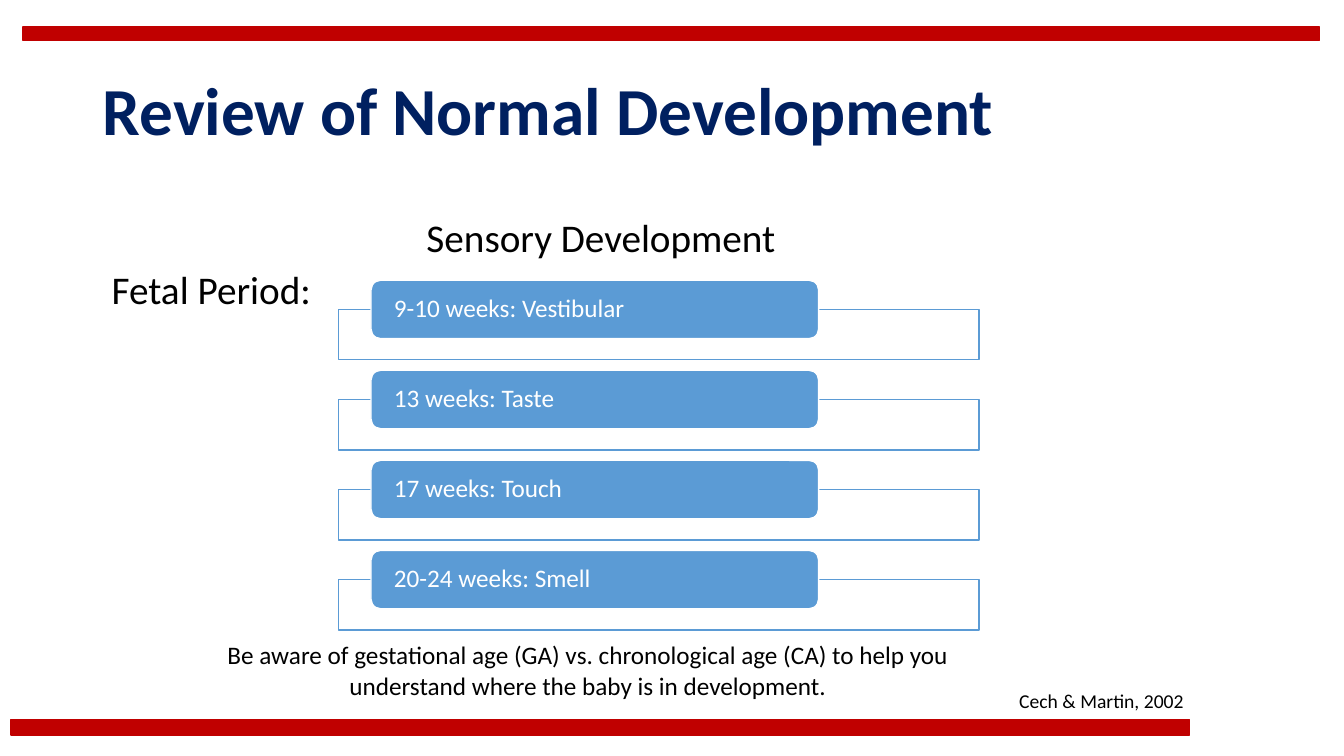
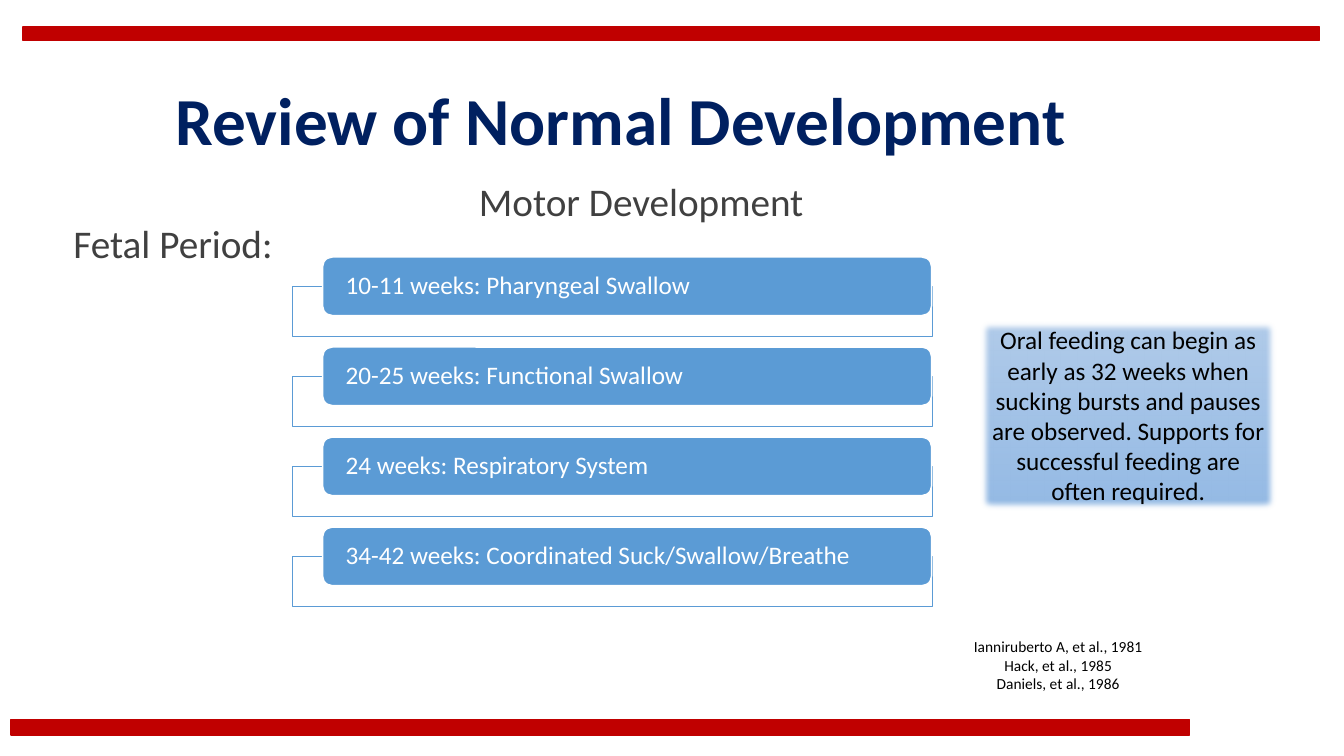
from dataclasses import dataclass

from lxml import etree
from pptx import Presentation
from pptx.dml.color import RGBColor
from pptx.enum.shapes import MSO_SHAPE
from pptx.enum.text import MSO_ANCHOR, MSO_AUTO_SIZE, PP_ALIGN
from pptx.oxml.ns import qn
from pptx.util import Inches, Pt

FONT = "Calibri"
COLOURS = {
    "band": "C00000",
    "title": "002060",
    "black": "000000",
    "grey": "404040",
    "white": "FFFFFF",
    "step": "5B9BD5",
    "callout_top": "B1CBE9",
    "callout_bottom": "93B9E4",
}
STEP_PITCH = 2.68 / 3


@dataclass
class Box:
    left: float
    top: float
    width: float
    height: float

    def lengths(self) -> tuple:
        return tuple(Inches(n) for n in (self.left, self.top, self.width, self.height))


@dataclass
class Label:
    text: str
    box: Box
    size: int
    colour: str = "black"
    align: PP_ALIGN = PP_ALIGN.LEFT
    wrap: bool = True


@dataclass
class Steps:
    texts: list[str]
    frame: Box  # outline of the first step
    pill_left: float
    pill_width: float


@dataclass
class Page:
    title_box: Box
    labels: list[Label]
    steps: Steps
    callout: Label | None = None


BANDS = [Box(0.11, 7.14, 11.69, 0.15), Box(0.23, 0.27, 12.86, 0.13)]
CENTER = PP_ALIGN.CENTER

PAGES = [
    Page(
        Box(0.92, 0.4, 11.5, 1.45),
        [
            Label("Sensory Development", Box(0.92, 2.1, 10.08, 0.5), 28, align=CENTER),
            Label("Fetal Period:", Box(1.01, 2.62, 2.4, 0.5), 28),
            Label("Cech & Martin, 2002", Box(10.01, 6.78, 1.85, 0.34), 14, wrap=False),
            Label(
                "Be aware of gestational age (GA) vs. chronological age (CA) to help you "
                "understand where the baby is in development.",
                Box(2.1, 6.29, 7.46, 0.71), 18, align=CENTER,
            ),
        ],
        Steps(
            ["9-10 weeks: Vestibular", "13 weeks: Taste", "17 weeks: Touch", "20-24 weeks: Smell"],
            Box(3.36, 3.07, 6.35, 0.5), 3.68, 4.44,
        ),
    ),
    Page(
        Box(1.64, 0.42, 10.5, 1.62),
        [
            Label("Motor Development", Box(0.36, 1.74, 12, 0.5), 28, "grey", CENTER),
            Label("Fetal Period:", Box(0.63, 2.16, 2.4, 0.5), 28, "grey"),
            Label(
                "Ianniruberto A, et al., 1981\nHack, et al., 1985\nDaniels, et al., 1986",
                Box(9.55, 6.27, 1.89, 0.66), 11, align=CENTER, wrap=False,
            ),
        ],
        Steps(
            [
                "10-11 weeks: Pharyngeal Swallow",
                "20-25 weeks: Functional Swallow",
                "24 weeks: Respiratory System",
                "34-42 weeks: Coordinated Suck/Swallow/Breathe",
            ],
            Box(2.9, 2.84, 6.35, 0.5), 3.2, 6.04,
        ),
        Label(
            "Oral feeding can begin as early as 32 weeks when sucking bursts and pauses "
            "are observed. Supports for successful feeding are often required.",
            Box(9.7, 3.16, 2.98, 1.92), 18, align=CENTER,
        ),
    ),
]


def rgb(name: str) -> RGBColor:
    return RGBColor.from_string(COLOURS[name])


def write(shape, text: str, size: int, colour: str, align: PP_ALIGN, bold: bool = False) -> None:
    frame = shape.text_frame
    frame.text = text
    frame.word_wrap = True
    frame.vertical_anchor = MSO_ANCHOR.MIDDLE
    for paragraph in frame.paragraphs:
        paragraph.alignment = align
        for run in paragraph.runs:
            run.font.name = FONT
            run.font.size = Pt(size)
            run.font.bold = bold
            run.font.color.rgb = rgb(colour)


def add_block(slide, kind: MSO_SHAPE, box: Box, fill: str, line: str, width: float = 1):
    block = slide.shapes.add_shape(kind, *box.lengths())
    block.shadow.inherit = False
    block.fill.solid()
    block.fill.fore_color.rgb = rgb(fill)
    block.line.color.rgb = rgb(line)
    block.line.width = Pt(width)
    return block


def add_title(slide, box: Box) -> None:
    title = slide.shapes.title
    title.left, title.top, title.width, title.height = box.lengths()
    write(title, "Review of Normal Development", 48, "title", PP_ALIGN.LEFT, bold=True)
    title.text_frame.auto_size = MSO_AUTO_SIZE.NONE
    title.text_frame.paragraphs[0].line_spacing = 0.9


def add_label(slide, label: Label) -> None:
    text_box = slide.shapes.add_textbox(*label.box.lengths())
    write(text_box, label.text, label.size, label.colour, label.align)
    text_box.text_frame.word_wrap = label.wrap


def add_steps(slide, steps: Steps) -> None:
    first = steps.frame
    for index, text in enumerate(steps.texts):
        top = first.top + index * STEP_PITCH
        frame = Box(first.left, top, first.width, first.height)
        outline = add_block(slide, MSO_SHAPE.RECTANGLE, frame, "white", "step")
        # Slightly transparent fill
        fill_colour = outline.fill._xPr.find(qn("a:solidFill"))[0]
        etree.SubElement(fill_colour, qn("a:alpha"), val="90000")

        pill_box = Box(steps.pill_left, top - 0.29, steps.pill_width, 0.58)
        pill = add_block(slide, MSO_SHAPE.ROUNDED_RECTANGLE, pill_box, "step", "white")
        write(pill, text, 18, "white", PP_ALIGN.LEFT)
        pill.text_frame.margin_left = pill.text_frame.margin_right = Inches(0.2)
        pill.text_frame.margin_top = pill.text_frame.margin_bottom = 0
        pill.text_frame.paragraphs[0].line_spacing = 0.9


def add_callout(slide, label: Label) -> None:
    callout = add_block(slide, MSO_SHAPE.RECTANGLE, label.box, "callout_top", "white", 0.5)
    callout.fill.gradient()
    callout.fill.gradient_angle = 270
    for stop, name in zip(callout.fill.gradient_stops, ("callout_top", "callout_bottom")):
        stop.color.rgb = rgb(name)
    # Soft edge
    effects = callout.element.spPr.find(qn("a:effectLst"))
    etree.SubElement(effects, qn("a:softEdge"), rad=str(Pt(5)))
    write(callout, label.text, label.size, label.colour, label.align)


def main() -> None:
    deck = Presentation()
    deck.slide_width, deck.slide_height = Inches(13.33), Inches(7.5)
    for page in PAGES:
        slide = deck.slides.add_slide(deck.slide_layouts[5])
        for band in BANDS:
            add_block(slide, MSO_SHAPE.RECTANGLE, band, "band", "band")
        add_title(slide, page.title_box)
        for label in page.labels:
            add_label(slide, label)
        add_steps(slide, page.steps)
        if page.callout:
            add_callout(slide, page.callout)
    deck.save("out.pptx")


if __name__ == "__main__":
    main()
